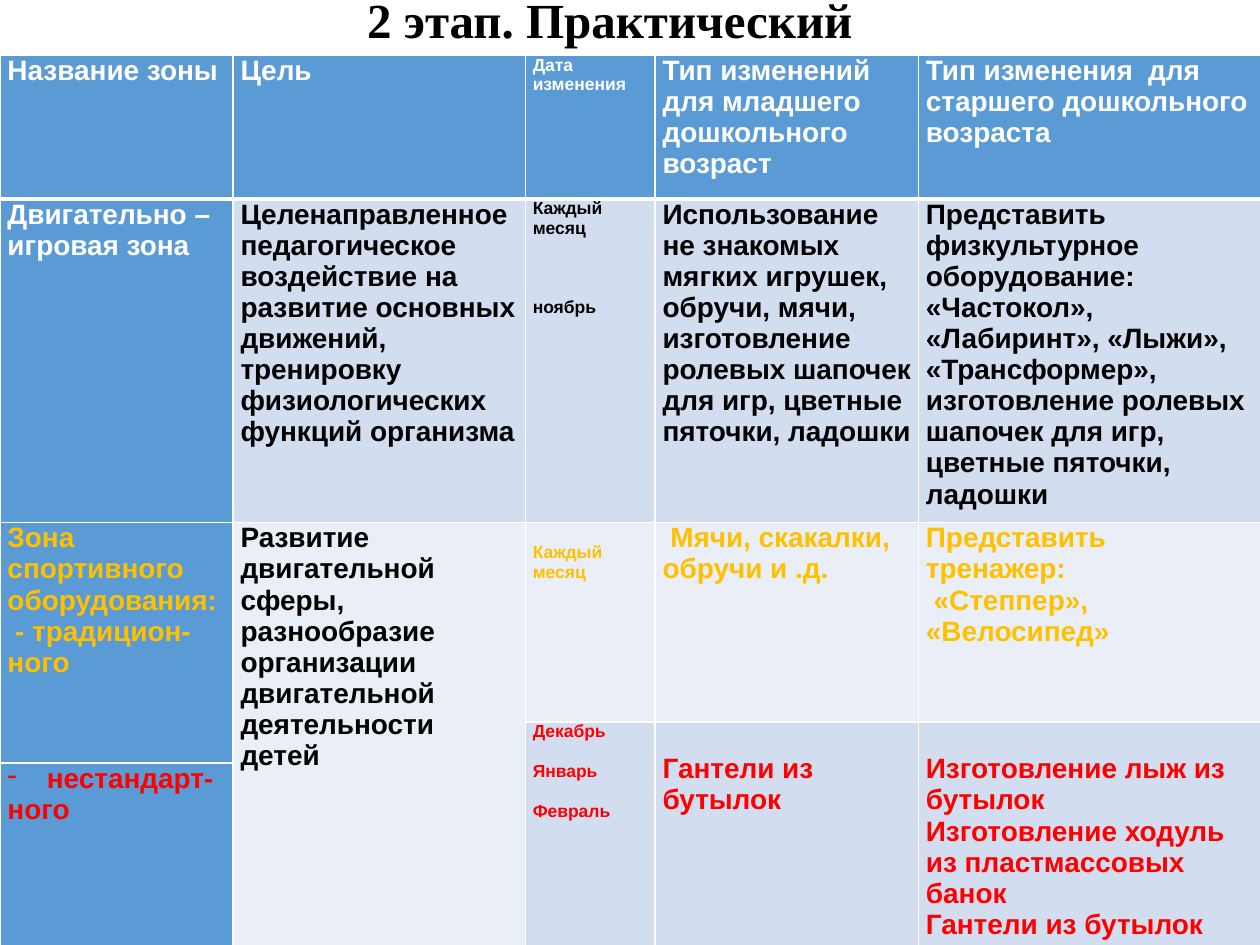
from dataclasses import dataclass

from lxml import etree
from pptx import Presentation
from pptx.dml.color import RGBColor
from pptx.enum.text import MSO_ANCHOR, MSO_AUTO_SIZE, PP_ALIGN
from pptx.oxml.ns import qn
from pptx.util import Pt

BOTTOM = MSO_ANCHOR.BOTTOM
CENTER = PP_ALIGN.CENTER
NO_FIT = MSO_AUTO_SIZE.NONE

COLOURS = {
    "white": "FFFFFF", "black": "000000", "gold": "FFC000", "red": "FF0000",
    "blue": "5B9BD5", "band": "D2DEEF", "pale": "EAEFF7",
}
COLUMNS = [133.2, 167, 74.2, 150.5, 195.8]
ROWS = [82, 185, 114, 23.5, 111]
MERGES = [(2, 0, 3), (2, 1, 4), (3, 2, 4), (3, 3, 4), (3, 4, 4)]
DATE_COLUMN = 2


@dataclass
class Entry:
    """Text of one table cell with its colour and gaps in points."""
    row: int
    column: int
    lines: list
    colour: str
    top: float = 0
    gap: float = 0
    dash: bool = False


ENTRIES = [
    Entry(0, 0, ["Название зоны"], "white"),
    Entry(0, 1, ["Цель"], "white"),
    Entry(0, 2, ["Дата изменения"], "white"),
    Entry(0, 3, ["Тип изменений для младшего дошкольного возраст"], "white"),
    Entry(0, 4, ["Тип изменения  для старшего дошкольного возраста"], "white"),
    Entry(1, 0, ["Двигательно – игровая зона"], "white"),
    Entry(1, 1, ["Целенаправленное педагогическое воздействие на развитие основных "
                 "движений, тренировку физиологических функций организма"], "black"),
    Entry(1, 2, ["Каждый месяц", "ноябрь"], "black", gap=34),
    Entry(1, 3, ["Использование не знакомых мягких игрушек, обручи, мячи, изготовление "
                 "ролевых шапочек для игр, цветные пяточки, ладошки"], "black"),
    Entry(1, 4, ["Представить физкультурное оборудование:",
                 "«Частокол», «Лабиринт», «Лыжи», «Трансформер»,  изготовление ролевых "
                 "шапочек для игр, цветные пяточки, ладошки"], "black"),
    Entry(2, 0, ["Зона спортивного оборудования:", " - традицион-", "ного"], "gold"),
    Entry(2, 1, ["Развитие двигательной сферы, разнообразие организации двигательной "
                 "деятельности детей"], "black"),
    Entry(2, 2, ["Каждый месяц"], "gold", top=11.5),
    Entry(2, 3, [" Мячи, скакалки, обручи и .д."], "gold"),
    Entry(2, 4, ["Представить тренажер:", " «Степпер», «Велосипед»"], "gold"),
    Entry(3, 2, ["Декабрь", "Январь", "Февраль"], "red", gap=11.5),
    Entry(3, 3, ["Гантели из бутылок"], "red", top=18),
    Entry(3, 4, ["Изготовление лыж из бутылок",
                 "Изготовление ходуль из пластмассовых банок",
                 "Гантели из бутылок"], "red", top=18),
    Entry(4, 0, ["нестандарт-", "ного"], "red", dash=True),
]


def colour_of(name):
    """Return the named colour."""
    return RGBColor.from_string(COLOURS[name])


def format_font(font, name, size, colour):
    """Set a bold font."""
    font.name = name
    font.size = Pt(size)
    font.bold = True
    font.color.rgb = colour_of(colour)


def add_dash(para):
    """Give a paragraph a hanging dash bullet."""
    properties = para._p.get_or_add_pPr()
    properties.set("marL", str(Pt(22.5)))
    properties.set("indent", str(-Pt(22.5)))
    etree.SubElement(properties, qn("a:buChar"), char="-")


def add_borders(cell, widths):
    """Draw white borders of the given widths around a cell."""
    properties = cell._tc.get_or_add_tcPr()
    for position, (side, width) in enumerate(widths.items()):
        line = etree.Element(qn(f"a:ln{side}"), w=str(Pt(width)))
        fill = etree.SubElement(line, qn("a:solidFill"))
        etree.SubElement(fill, qn("a:srgbClr"), val=COLOURS["white"])
        properties.insert(position, line)


def style_cell(cell, row, column):
    """Set the fill, margins and borders of a cell."""
    if row == 0 or column == 0:
        fill = "blue"
    elif row == 2 or column == 1 and row > 2:
        fill = "pale"
    else:
        fill = "band"
    cell.fill.solid()
    cell.fill.fore_color.rgb = colour_of(fill)
    cell.margin_left = cell.margin_right = Pt(4.3)
    cell.margin_top = cell.margin_bottom = Pt(0)
    add_borders(cell, {"L": 1, "R": 1, "T": 3 if row == 1 else 1, "B": 3 if row == 0 else 1})


def fill_cell(cell, entry):
    """Write an entry into its cell."""
    cell.margin_top = Pt(entry.top)
    cell.text_frame.text = "\n".join(entry.lines)
    size = 10 if entry.column == DATE_COLUMN else 16
    for index, para in enumerate(cell.text_frame.paragraphs):
        if index and entry.gap:
            para.space_before = Pt(entry.gap)
        if entry.dash and index == 0:
            add_dash(para)
        for span in para.runs:
            format_font(span.font, "Arial", size, entry.colour)


def place_title(page, left, top, width, height):
    """Place the stage title in the given box."""
    title = page.shapes.title
    title.left, title.top, title.width, title.height = map(Pt, (left, top, width, height))
    frame = title.text_frame
    frame.text = "2 этап. Практический"
    frame.auto_size = NO_FIT
    frame.vertical_anchor = BOTTOM
    para = frame.paragraphs[0]
    para.alignment = CENTER
    para.line_spacing = 0.9
    format_font(para.runs[0].font, "Times New Roman", 28, "black")


def place_zones(page, left, top, width, height):
    """Place the table of activity zones in the given box."""
    table = page.shapes.add_table(
        len(ROWS), len(COLUMNS), Pt(left), Pt(top), Pt(width), Pt(height)).table
    for column, size in zip(table.columns, COLUMNS):
        column.width = Pt(size)
    for row, size in zip(table.rows, ROWS):
        row.height = Pt(size)
    for row in range(len(ROWS)):
        for column in range(len(COLUMNS)):
            style_cell(table.cell(row, column), row, column)
    for first, column, last in MERGES:
        table.cell(first, column).merge(table.cell(last, column))
    for entry in ENTRIES:
        fill_cell(table.cell(entry.row, entry.column), entry)


def main():
    """Build the deck and save it."""
    deck = Presentation()
    deck.slide_width, deck.slide_height = Pt(720), Pt(540)
    page = deck.slides.add_slide(deck.slide_layouts[5])
    place_title(page, 42.5, 2, 612, 29.5)
    place_zones(page, 0, 31.7, sum(COLUMNS), sum(ROWS))
    deck.save("out.pptx")


if __name__ == "__main__":
    main()
